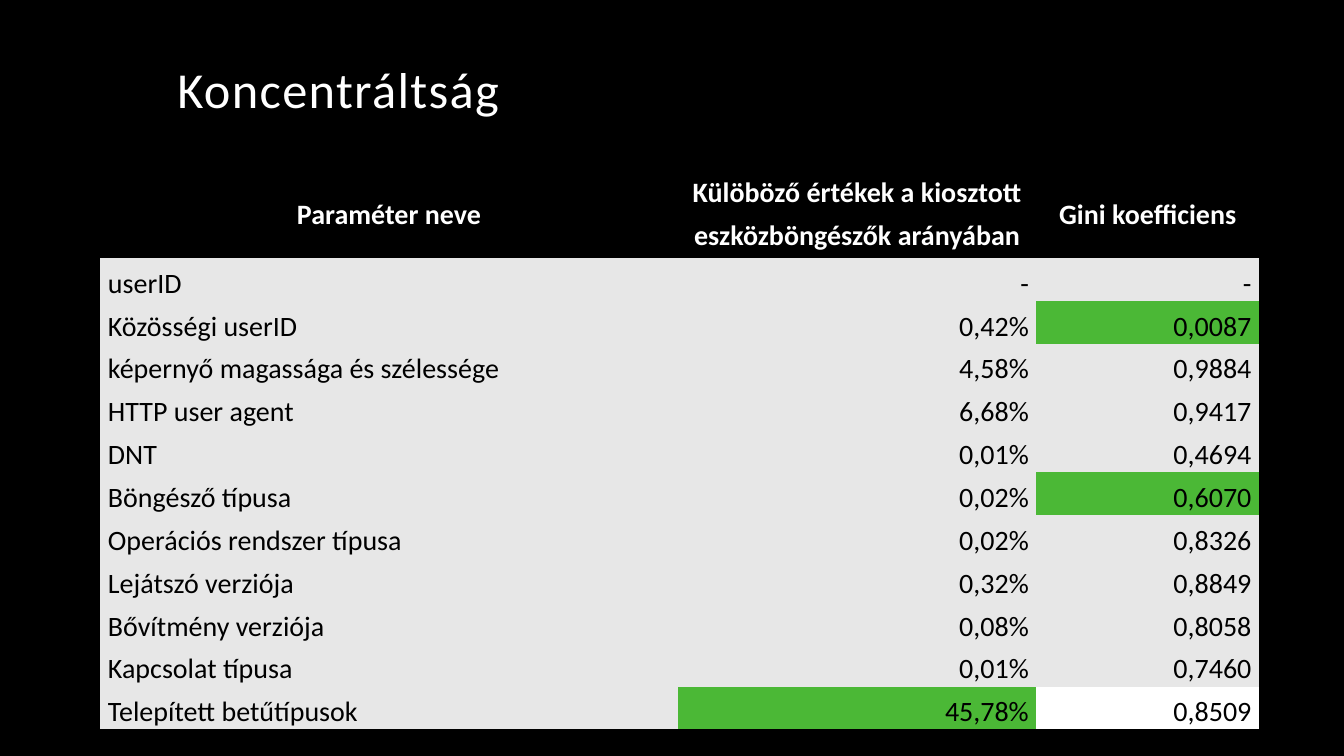
from pptx import Presentation
from pptx.dml.color import RGBColor
from pptx.enum.text import MSO_ANCHOR, PP_ALIGN
from pptx.oxml.ns import qn
from pptx.util import Cm, Pt

BLACK = RGBColor(0x00, 0x00, 0x00)
WHITE = RGBColor(0xFF, 0xFF, 0xFF)
GREY = RGBColor(0xE7, 0xE7, 0xE7)
GREEN = RGBColor(0x4B, 0xB8, 0x36)
NO_STYLE_NO_GRID = "{2D5ABB26-0587-4C30-8999-92F81FD0307C}"

HEADER = ["Paraméter neve", "Külöböző értékek a kiosztott eszközböngészők arányában", "Gini koefficiens"]
PARAMETERS = [
    ["userID", "-", "-"],
    ["Közösségi userID", "0,42%", "0,0087"],
    ["képernyő magassága és szélessége", "4,58%", "0,9884"],
    ["HTTP user agent", "6,68%", "0,9417"],
    ["DNT", "0,01%", "0,4694"],
    ["Böngésző típusa", "0,02%", "0,6070"],
    ["Operációs rendszer típusa", "0,02%", "0,8326"],
    ["Lejátszó verziója", "0,32%", "0,8849"],
    ["Bővítmény verziója", "0,08%", "0,8058"],
    ["Kapcsolat típusa", "0,01%", "0,7460"],
    ["Telepített betűtípusok", "45,78%", "0,8509"],
]
SPECIAL_FILLS = {(2, 2): GREEN, (6, 2): GREEN, (11, 1): GREEN, (11, 2): WHITE}


def write_text(text_frame, text, size=20, color=BLACK, bold=False,
               align=PP_ALIGN.LEFT, line_spacing=1.25, letter_spacing=0):
    text_frame.word_wrap = True
    paragraph = text_frame.paragraphs[0]
    paragraph.alignment = align
    paragraph.line_spacing = line_spacing
    run = paragraph.add_run()
    run.text = text
    run.font.name = "Calibri"
    run.font.size = Pt(size)
    run.font.bold = bold
    run.font.color.rgb = color
    if letter_spacing:
        run._r.get_or_add_rPr().set("spc", str(letter_spacing * 100))


presentation = Presentation()
presentation.slide_width = Cm(33.87)
presentation.slide_height = Cm(19.05)
slide = presentation.slides.add_slide(presentation.slide_layouts[6])
slide.background.fill.solid()
slide.background.fill.fore_color.rgb = BLACK

title = slide.shapes.add_textbox(Cm(4.22), Cm(1.07), Cm(25.4), Cm(2.06))
title.text_frame.vertical_anchor = MSO_ANCHOR.BOTTOM
write_text(title.text_frame, "Koncentráltság", size=36, color=WHITE,
           line_spacing=0.9, letter_spacing=1)

rows = [HEADER] + PARAMETERS
table = slide.shapes.add_table(len(rows), len(HEADER), Cm(2.53), Cm(4.11), Cm(29.2), Cm(14.27)).table
table.first_row = False
table.horz_banding = False
table._tbl.tblPr.find(qn("a:tableStyleId")).text = NO_STYLE_NO_GRID
for column, width in zip(table.columns, [14.55, 9.04, 5.61]):
    column.width = Cm(width)

for row_index, row in enumerate(rows):
    is_header = row_index == 0
    table.rows[row_index].height = Cm(2.39 if is_header else 1.08)
    for column_index, text in enumerate(row):
        cell = table.cell(row_index, column_index)
        cell.margin_left = cell.margin_right = Cm(0.19)
        cell.margin_top = cell.margin_bottom = 0
        cell.fill.solid()
        if is_header:
            cell.vertical_anchor = MSO_ANCHOR.MIDDLE
            cell.fill.fore_color.rgb = BLACK
            write_text(cell.text_frame, text, color=WHITE, bold=True, align=PP_ALIGN.CENTER)
        else:
            cell.fill.fore_color.rgb = SPECIAL_FILLS.get((row_index, column_index), GREY)
            write_text(cell.text_frame, text,
                       align=PP_ALIGN.JUSTIFY if column_index == 0 else PP_ALIGN.RIGHT)

presentation.save("out.pptx")
